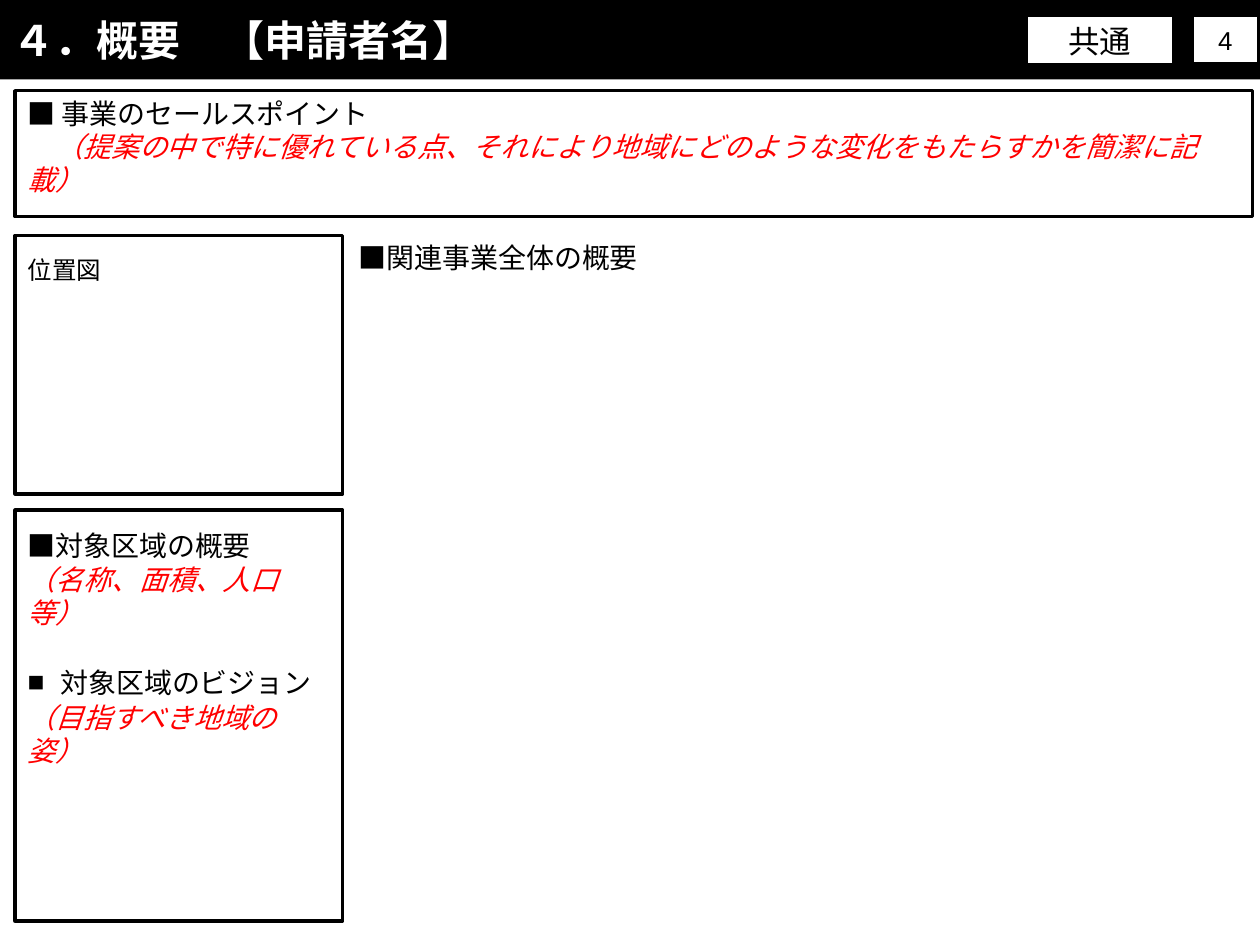
from dataclasses import dataclass
from typing import Any

from lxml import etree
from pptx import Presentation
from pptx.dml.color import RGBColor
from pptx.enum.shapes import MSO_SHAPE
from pptx.enum.text import MSO_ANCHOR, MSO_AUTO_SIZE, PP_ALIGN
from pptx.oxml.ns import qn
from pptx.util import Inches, Pt

RECTANGLE = MSO_SHAPE.RECTANGLE
TOP, MIDDLE = MSO_ANCHOR.TOP, MSO_ANCHOR.MIDDLE
LEFT, CENTER = PP_ALIGN.LEFT, PP_ALIGN.CENTER
NO_AUTOFIT = MSO_AUTO_SIZE.NONE

MARGIN = 0.12
SIDE_WIDTH = 2.6


def rgb(value):
    return RGBColor.from_string(value)


@dataclass
class Line:
    """One paragraph with its formatting."""
    text: str
    size: float = 16
    color: str = "000000"
    font: str = "Arial"
    bold: bool = False
    italic: bool = False
    align: Any = LEFT
    before: float = 0
    bullet: str = ""


def hint(text, **options):
    return Line(text, color="FF0000", italic=True, **options)


class SlideBuilder:
    black = "000000"
    white = "FFFFFF"
    asian_font = "Noto Sans CJK JP"
    leading = 1.2
    bullet_indent = 0.26

    def __init__(self, slide):
        self.slide = slide

    def format_paragraph(self, paragraph, line):
        paragraph.text = line.text
        paragraph.alignment = line.align
        paragraph.line_spacing = Pt(round(line.size * self.leading))
        paragraph.space_before = Pt(line.before)
        properties = paragraph._p.get_or_add_pPr()
        indent = Inches(self.bullet_indent) if line.bullet else 0
        properties.set("marL", str(indent))
        properties.set("indent", str(-indent))
        if line.bullet:
            etree.SubElement(properties, qn("a:buFont"), typeface="Arial")
            etree.SubElement(properties, qn("a:buChar"), char=line.bullet)
        else:
            etree.SubElement(properties, qn("a:buNone"))
        for run in paragraph.runs:
            font = run.font
            font.size = Pt(line.size)
            font.bold = line.bold
            font.italic = line.italic
            font.color.rgb = rgb(line.color)
            font.name = line.font
            etree.SubElement(run._r.get_or_add_rPr(), qn("a:ea"),
                             typeface=self.asian_font)

    def fill_text(self, shape, lines, anchor=TOP):
        frame = shape.text_frame
        frame.word_wrap = True
        frame.auto_size = NO_AUTOFIT
        frame.vertical_anchor = anchor
        for index, line in enumerate(lines):
            paragraph = frame.add_paragraph() if index else frame.paragraphs[0]
            self.format_paragraph(paragraph, line)

    def place(self, shape, left, top, width, height):
        shape.left, shape.top = Inches(left), Inches(top)
        shape.width, shape.height = Inches(width), Inches(height)

    def title(self, line, *box):
        heading = self.slide.shapes.title
        self.place(heading, *box)
        heading.fill.solid()
        heading.fill.fore_color.rgb = rgb(self.black)
        self.fill_text(heading, [line], MIDDLE)

    def body(self, lines, *box):
        content = self.slide.placeholders[1]
        self.place(content, *box)
        self.fill_text(content, lines)

    def label(self, line, *box):
        self.fill_text(self.slide.shapes.add_textbox(*map(Inches, box)), [line])

    def frame(self, *box, lines=(), fill=None, border=2, anchor=TOP):
        panel = self.slide.shapes.add_shape(RECTANGLE, *map(Inches, box))
        panel.shadow.inherit = False
        panel.line.color.rgb = rgb(self.black)
        panel.line.width = Pt(border)
        if fill:
            panel.fill.solid()
            panel.fill.fore_color.rgb = rgb(fill)
        else:
            panel.fill.background()
        self.fill_text(panel, lines, anchor)

    def tag(self, line, *box, border):
        self.frame(*box, lines=[line], fill=self.white, border=border, anchor=MIDDLE)


def main():
    presentation = Presentation()
    presentation.slide_width, presentation.slide_height = Inches(10), Inches(7.5)
    layout = presentation.slide_layouts[1]
    builder = SlideBuilder(presentation.slides.add_slide(layout))
    noto = builder.asian_font

    builder.title(Line("４．概要　【申請者名】", size=24, color=builder.white,
                       font=noto, bold=True), 0, 0, 10, 0.63)
    builder.tag(Line("共通", size=18, align=CENTER), 8.15, 0.13, 1.16, 0.38, border=1)
    builder.tag(Line("4", size=14.8, align=CENTER), 9.47, 0.13, 0.51, 0.37, border=0.75)

    builder.frame(MARGIN, 0.72, 9.82, 1, lines=[
        Line("■ 事業のセールスポイント", font=noto),
        hint("　（提案の中で特に優れている点、それにより地域にどのような変化をもたらすかを簡潔に記載）",
             font=noto),
    ])

    builder.frame(MARGIN, 1.87, SIDE_WIDTH, 2.05)
    builder.label(Line("位置図", size=14), MARGIN, 1.97, 2.44, 0.34)
    builder.label(Line("■関連事業全体の概要"), 2.75, 1.86, 3.39, 0.37)

    builder.frame(MARGIN, 4.05, SIDE_WIDTH, 3.26)
    builder.body([
        Line("■対象区域の概要"),
        hint("（名称、面積、人口等）"),
        Line("対象区域のビジョン", font="Karla", before=21, bullet="■"),
        hint("（目指すべき地域の姿）", font="Karla", before=1),
    ], MARGIN, 4.15, SIDE_WIDTH, 2.05)

    presentation.save("out.pptx")


if __name__ == "__main__":
    main()
